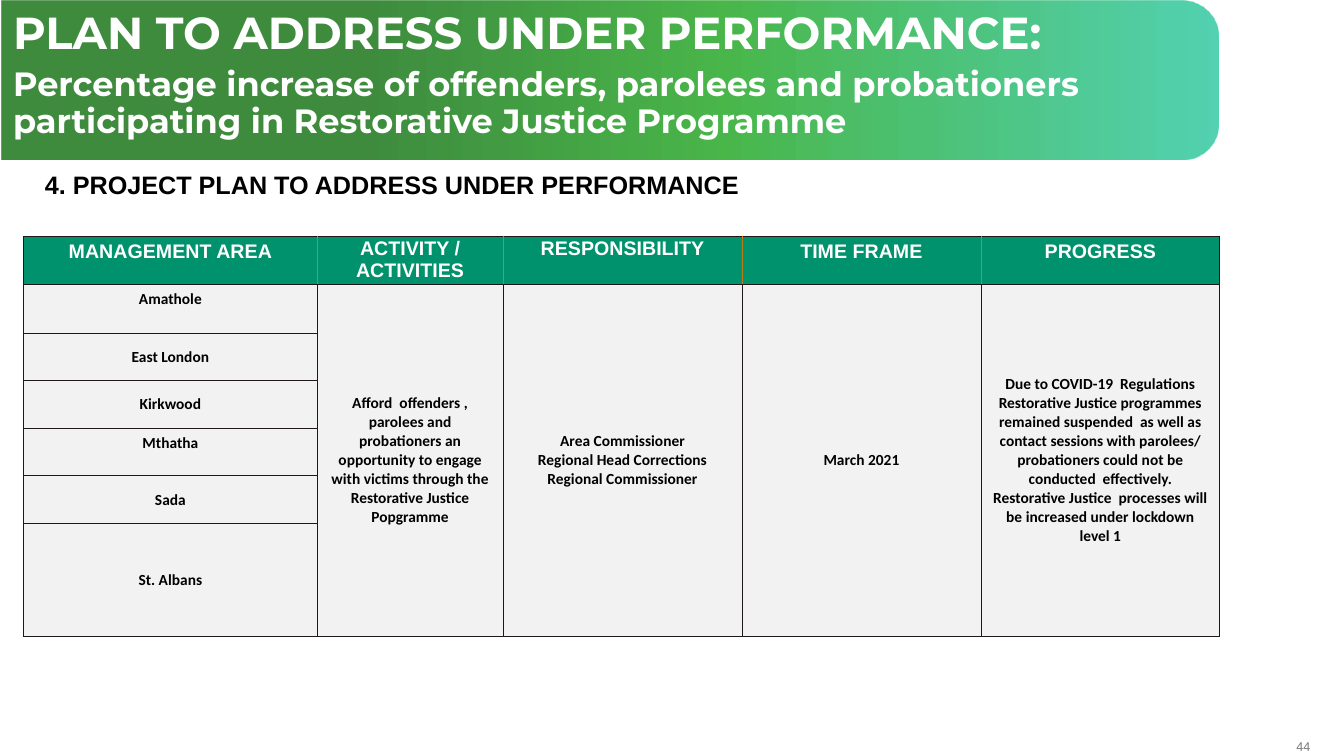
from lxml.etree import SubElement, Element
from pptx import Presentation
from pptx.dml.color import RGBColor
from pptx.enum.shapes import MSO_SHAPE
from pptx.enum.text import MSO_ANCHOR, PP_ALIGN
from pptx.oxml.ns import qn
from pptx.util import Cm, Pt

COLORS = {
    "white": "FFFFFF", "black": "000000", "gray": "77787B",
    "head": "00926C", "body": "F2F2F2", "line": "1E1918", "gold": "BF7B17",
    "dark": "006600", "green": "009900", "teal": "00BC8D",
}
AREAS = ["Amathole", "East London", "Kirkwood", "Mthatha", "Sada", "St. Albans"]
RAISED = {"Amathole", "Mthatha"}
HEADS = ["MANAGEMENT AREA", "ACTIVITY / ACTIVITIES", "RESPONSIBILITY", "TIME FRAME", "PROGRESS"]
TIGHT = {"ACTIVITY / ACTIVITIES", "RESPONSIBILITY"}
PLANS = [
    ["Afford  offenders , parolees and probationers an opportunity to engage "
     "with victims through the Restorative Justice Popgramme"],
    ["Area Commissioner", "Regional Head Corrections", "Regional Commissioner"],
    ["March 2021"],
    ["Due to COVID-19  Regulations Restorative Justice programmes remained "
     "suspended  as well as contact sessions with parolees/ probationers could "
     "not be conducted  effectively. Restorative Justice  processes will be "
     "increased under lockdown level 1"],
]
WIDTHS = [7.39, 4.69, 6.02, 6.02, 6.02]
HEIGHTS = [1.21, 1.23, 1.19, 1.21, 1.19, 1.21, 2.84]


def write(frame, lines, sizes, font="Arial", color="black", bold=True,
          align=PP_ALIGN.LEFT, space=None, after=None):
    for i, line in enumerate(lines):
        para = frame.paragraphs[0] if i == 0 else frame.add_paragraph()
        para.alignment = align
        if space:
            para.line_spacing = space
        if after:
            para.space_after = Pt(after)
        run = para.add_run()
        run.text = line
        run.font.size = Pt(sizes[min(i, len(sizes) - 1)])
        run.font.name = font
        run.font.bold = bold
        run.font.color.rgb = RGBColor.from_string(COLORS[color])


class Deck:
    def __init__(self, slide):
        self.slide = slide
        self.colors = COLORS

    def banner(self, left, top, width, height, stops):
        x = left + (width - height) / 2
        y = top + (height - width) / 2
        shape = self.slide.shapes.add_shape(
            MSO_SHAPE.ROUND_2_SAME_RECTANGLE, Cm(x), Cm(y), Cm(height), Cm(width))
        shape.rotation = 90
        shape.adjustments[0] = 0.233
        shape.adjustments[1] = 0
        shape.shadow.inherit = False
        shape.line.fill.background()
        shape.fill.gradient()
        shape.fill.gradient_angle = 90
        grad = shape.fill._xPr.find(qn("a:gradFill"))
        steps = grad.find(qn("a:gsLst"))
        for old in list(steps):
            steps.remove(old)
        for place, color, alpha in stops:
            stop = SubElement(steps, qn("a:gs"), pos=str(place * 1000))
            tone = SubElement(stop, qn("a:srgbClr"), val=self.colors[color])
            SubElement(tone, qn("a:alpha"), val=str(alpha * 1000))

    def label(self, box, lines, sizes, inset=True, anchor=MSO_ANCHOR.TOP, **style):
        frame = self.slide.shapes.add_textbox(*map(Cm, box)).text_frame
        frame.word_wrap = True
        frame.vertical_anchor = anchor
        if not inset:
            frame.margin_left = frame.margin_right = 0
            frame.margin_top = frame.margin_bottom = 0
        write(frame, lines, sizes, **style)

    def table(self, left, top, widths, heights):
        grid = self.slide.shapes.add_table(
            len(heights), len(widths), Cm(left), Cm(top),
            Cm(sum(widths)), Cm(sum(heights))).table
        for col, width in zip(grid.columns, widths):
            col.width = Cm(width)
        for row, height in zip(grid.rows, heights):
            row.height = Cm(height)
        for r in range(len(heights)):
            for c in range(len(widths)):
                self.paint(grid.cell(r, c), r == 0, c == 0, c == len(widths) - 1)
        return grid

    def paint(self, cell, head, first, last):
        cell.fill.solid()
        cell.fill.fore_color.rgb = RGBColor.from_string(self.colors["head" if head else "body"])
        edges = {"L": "gold" if head and not first else "line",
                 "R": "gold" if head and not last else "line",
                 "T": "line", "B": "line"}
        props = cell._tc.get_or_add_tcPr()
        for i, (side, color) in enumerate(edges.items()):
            edge = Element(qn(f"a:ln{side}"), w=str(Pt(0.5)))
            fill = SubElement(edge, qn("a:solidFill"))
            SubElement(fill, qn("a:srgbClr"), val=self.colors[color])
            props.insert(i, edge)

    def fill(self, cell, lines, size, font, color, anchor=MSO_ANCHOR.MIDDLE, tight=False):
        cell.vertical_anchor = anchor
        if tight:
            cell.margin_left = cell.margin_right = cell.margin_top = Cm(0.03)
            cell.margin_bottom = 0
        write(cell.text_frame, lines, [size], font=font, color=color, align=PP_ALIGN.CENTER)


def main():
    show = Presentation()
    show.slide_width, show.slide_height = Cm(33.87), Cm(19.05)
    deck = Deck(show.slides.add_slide(show.slide_layouts[6]))

    deck.label((32.03, 18.62, 0.99, 0.38), ["44"], [9], inset=False, color="gray",
               anchor=MSO_ANCHOR.MIDDLE, bold=False, align=PP_ALIGN.RIGHT)
    deck.banner(0.03, 0.01, 30.68, 4,
                [(30, "dark", 75), (59, "green", 71), (100, "teal", 67)])
    deck.label((0.88, 4.14, 24.5, 1.02), ["4. PROJECT PLAN TO ADDRESS UNDER PERFORMANCE"], [18])

    grid = deck.table(0.6, 5.95, WIDTHS, HEIGHTS)
    for c, head in enumerate(HEADS):
        deck.fill(grid.cell(0, c), [head], 14, "Arial", "white",
                  anchor=MSO_ANCHOR.TOP, tight=head in TIGHT)
    for r, area in enumerate(AREAS, 1):
        anchor = MSO_ANCHOR.TOP if area in RAISED else MSO_ANCHOR.MIDDLE
        deck.fill(grid.cell(r, 0), [area], 11, "Calibri", "black", anchor=anchor)
    for c, plan in enumerate(PLANS, 1):
        grid.cell(1, c).merge(grid.cell(len(AREAS), c))
        deck.fill(grid.cell(1, c), plan, 11, "Calibri", "black")

    deck.label((0.08, 0.15, 30.43, 1.45),
               ["PLAN TO ADDRESS UNDER PERFORMANCE:",
                "Percentage increase of offenders, parolees and probationers "
                "participating in Restorative Justice Programme"],
               [32, 24], font="Montserrat", color="white", space=0.9, after=6)
    show.save("out.pptx")


if __name__ == "__main__":
    main()
